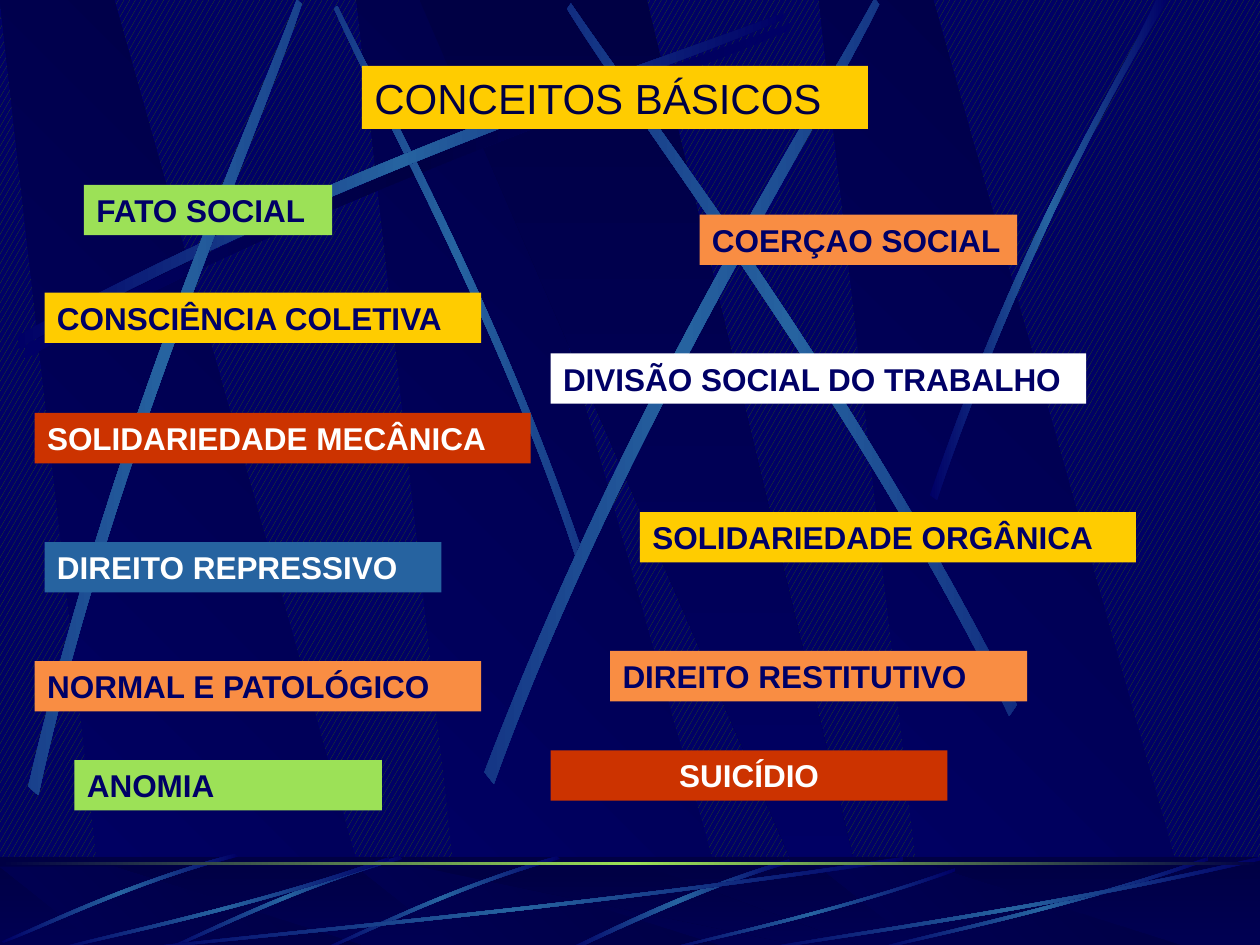
from dataclasses import dataclass
from typing import NamedTuple

from lxml.etree import SubElement
from pptx import Presentation
from pptx.dml.color import RGBColor
from pptx.enum.dml import MSO_PATTERN
from pptx.enum.shapes import MSO_SHAPE
from pptx.enum.text import MSO_AUTO_SIZE, PP_ALIGN
from pptx.oxml.ns import qn
from pptx.util import Inches, Pt

COLUMNS, ROWS = 100, 75
WIDTH, HEIGHT = Inches(10), Inches(7.5)

NAVY = RGBColor(0x00, 0x00, 0x66)
MIDNIGHT = RGBColor(0x00, 0x00, 0x44)
MOSS = RGBColor(0x2D, 0x55, 0x13)
STEEL = RGBColor(0x26, 0x63, 0xA0)
GOLD = RGBColor(0xFF, 0xCC, 0x00)
LIME = RGBColor(0x9C, 0xE1, 0x57)
ORANGE = RGBColor(0xF9, 0x8D, 0x43)
RUST = RGBColor(0xCC, 0x33, 0x00)
WHITE = RGBColor(0xFF, 0xFF, 0xFF)


class Box(NamedTuple):
    column: float
    row: float
    columns: float
    rows: float

    def at(self, x: float, y: float) -> tuple[int, int]:
        return (round((self.column + x * self.columns) * WIDTH / COLUMNS),
                round((self.row + y * self.rows) * HEIGHT / ROWS))

    def frame(self) -> tuple[int, int, int, int]:
        left, top = self.at(0, 0)
        right, bottom = self.at(1, 1)
        return left, top, right - left, bottom - top


class Gradient(NamedTuple):
    colors: tuple[RGBColor, ...]
    angle: int = 0


class Outline(NamedTuple):
    points: tuple[tuple[float, float], ...]
    curved: bool = True


@dataclass
class Ribbon:
    box: Box
    outline: Outline
    gradient: Gradient
    rotation: float = 0
    flip_x: bool = False
    flip_y: bool = False


@dataclass
class Concept:
    text: str
    box: Box
    fill: RGBColor
    color: RGBColor = NAVY
    size: int = 18
    bold: bool = True
    align: PP_ALIGN = PP_ALIGN.LEFT


STREAK = Outline(((0, 0.96), (0.43, 0.43), (0.83, 0.15), (1, 0),
                  (1, 0.02), (0.83, 0.19), (0.39, 0.5), (0, 1)))
STEEP_STREAK = Outline(((0, 0.99), (0.4, 0.44), (0.79, 0.17), (0.95, 0),
                        (1, 0), (0.52, 0.37), (0.16, 0.81), (0.03, 1)))
LOW_STREAK = Outline(((0, 0.99), (0.16, 0.82), (0.49, 0.37), (0.99, 0),
                      (1, 0.04), (0.68, 0.25), (0.23, 0.77), (0.03, 1)))
SHAFT = Outline(((0.28, 1), (1, 1), (0.3, 0), (0, 0)), curved=False)
WEDGE = Outline(((0, 0), (0.9, 1), (1, 1), (0.5, 0)), curved=False)

GLOW = Gradient((NAVY, STEEL, NAVY))
SHADE = Gradient((NAVY, MIDNIGHT, NAVY))
SHAFT_FADE = Gradient((NAVY, MIDNIGHT), 315)
DOWN_FADE = Gradient((MIDNIGHT, NAVY), 90)
RULE_GLOW = Gradient((MIDNIGHT, LIME, MIDNIGHT))


def shafts(row: float, rows: float) -> list[Ribbon]:
    return [Ribbon(Box(column, row, 30.2, rows), SHAFT, SHAFT_FADE)
            for column in (28.3, 0, 65)] + [
        Ribbon(Box(33.3, row, 36.1, rows), WEDGE, DOWN_FADE)]


SKY = shafts(0, 75.2) + [
    Ribbon(Box(2, 1.8, 60.8, 26.7), STREAK, SHADE),
    Ribbon(Box(14.1, 13.5, 44.2, 17.5), STREAK, GLOW, 45, flip_x=True),
    Ribbon(Box(1.4, 1, 60.8, 26.7), STREAK, GLOW),
    Ribbon(Box(-17.1, 18.2, 60.8, 26.7), STREAK, GLOW, 311.7),
    Ribbon(Box(23.1, 16, 62.4, 30.1), STREAK, GLOW, 321.6),
    Ribbon(Box(32.3, 15.2, 60.8, 26.7), STREAK, GLOW, 34.7, flip_x=True),
    Ribbon(Box(73.8, 0, 18.9, 39.7), STEEP_STREAK, GLOW),
]
FLOOR = Box(0, 68, 100, 7.5)
FLOOR_STREAKS = [Ribbon(Box(44.8, 68.2, 18, 7.3), LOW_STREAK, GLOW)] + [
    Ribbon(Box(column, row, columns, rows), STREAK, GLOW, 315, flip_x=True)
    for column, row, columns, rows in ((25.8, 67.6, 18.4, 8.3), (13.3, 67.6, 18.4, 8.3),
                                       (0.5, 67.1, 18, 8.5))
] + [
    Ribbon(Box(column, row, columns, 75.5 - row), STREAK, GLOW, flip_x=True, flip_y=True)
    for column, row, columns in ((10, 68, 61.7), (4.2, 68, 26.7), (52.7, 68.9, 23.1),
                                 (69.2, 68, 26.7), (60, 68, 40))
]
FLOOR_RULE = Box(0, 68.4, 100, 0.24)

CONCEPTS = [
    Concept("CONCEITOS BÁSICOS", Box(28.73, 5.23, 40.16, 5), GOLD, MIDNIGHT, 24, False),
    Concept("FATO SOCIAL", Box(6.67, 14.67, 19.7, 4), LIME),
    Concept("COERÇAO SOCIAL", Box(55.52, 17.04, 25.2, 4), ORANGE),
    Concept("CONSCIÊNCIA COLETIVA", Box(3.54, 23.22, 34.65, 4), GOLD),
    Concept("DIVISÃO SOCIAL DO TRABALHO", Box(43.7, 28.05, 42.5, 4), WHITE),
    Concept("SOLIDARIEDADE MECÂNICA", Box(2.75, 32.78, 39.37, 4), RUST, WHITE),
    Concept("SOLIDARIEDADE ORGÂNICA", Box(50.79, 40.64, 39.37, 4), GOLD),
    Concept("DIREITO REPRESSIVO", Box(3.54, 43.03, 31.5, 4), STEEL, WHITE),
    Concept("NORMAL E PATOLÓGICO", Box(2.75, 52.47, 35.43, 4), ORANGE),
    Concept("DIREITO RESTITUTIVO", Box(48.42, 51.67, 33.1, 4), ORANGE),
    Concept("SUICÍDIO", Box(43.7, 59.55, 31.5, 4), RUST, WHITE, align=PP_ALIGN.CENTER),
    Concept("ANOMIA", Box(5.91, 60.33, 24.4, 4), LIME),
]


def paint_gradient(shape, gradient: Gradient) -> None:
    shape.shadow.inherit = False
    shape.line.fill.background()
    shape.fill.gradient()
    shape.fill.gradient_angle = (360 - gradient.angle) % 360
    stops = next(shape.element.iter(qn("a:gsLst")))
    stops.getparent().set("rotWithShape", "0")
    for stop in list(stops):
        stops.remove(stop)
    for index, color in enumerate(gradient.colors):
        position = 100000 * index // (len(gradient.colors) - 1)
        stop = SubElement(stops, qn("a:gs"), pos=str(position))
        SubElement(stop, qn("a:srgbClr"), val=str(color))


def bend_sides(shape) -> None:
    sides = list(shape.element.iter(qn("a:lnTo")))
    for controls in (sides[:3], sides[4:]):
        bend = controls[0].makeelement(qn("a:cubicBezTo"))
        controls[0].addprevious(bend)
        for control in controls:
            bend.append(control[0])
            control.getparent().remove(control)


def draw_ribbon(slide, ribbon: Ribbon) -> None:
    points = [ribbon.box.at(1 - x if ribbon.flip_x else x, 1 - y if ribbon.flip_y else y)
              for x, y in ribbon.outline.points]
    builder = slide.shapes.build_freeform(*points[0], scale=1.0)
    builder.add_line_segments(points[1:], close=False)
    shape = builder.convert_to_shape()
    if ribbon.outline.curved:
        bend_sides(shape)
    shape.rotation = ribbon.rotation
    paint_gradient(shape, ribbon.gradient)


def draw_band(slide, box: Box, gradient: Gradient) -> None:
    band = slide.shapes.add_shape(MSO_SHAPE.RECTANGLE, *box.frame())
    paint_gradient(band, gradient)


def draw_veil(slide, box: Box, color: RGBColor, opacity: int) -> None:
    veil = slide.shapes.add_shape(MSO_SHAPE.RECTANGLE, *box.frame())
    veil.shadow.inherit = False
    veil.line.fill.background()
    veil.fill.solid()
    veil.fill.fore_color.rgb = color
    tint = next(veil.element.spPr.iter(qn("a:srgbClr")))
    SubElement(tint, qn("a:alpha"), val=str(opacity * 1000))


def draw_concept(slide, concept: Concept) -> None:
    label = slide.shapes.add_textbox(*concept.box.frame())
    label.fill.solid()
    label.fill.fore_color.rgb = concept.fill
    label.text_frame.word_wrap = True
    label.text_frame.auto_size = MSO_AUTO_SIZE.SHAPE_TO_FIT_TEXT
    paragraph = label.text_frame.paragraphs[0]
    paragraph.text = concept.text
    paragraph.alignment = concept.align
    paragraph.font.name = "Arial"
    paragraph.font.size = Pt(concept.size)
    paragraph.font.bold = concept.bold
    paragraph.font.color.rgb = concept.color


def main() -> None:
    deck = Presentation()
    deck.slide_width, deck.slide_height = WIDTH, HEIGHT
    slide = deck.slides.add_slide(deck.slide_layouts[6])
    backdrop = slide.background.fill
    backdrop.patterned()
    backdrop.pattern = MSO_PATTERN.LARGE_CONFETTI
    backdrop.fore_color.rgb = MOSS
    backdrop.back_color.rgb = NAVY
    for ribbon in SKY:
        draw_ribbon(slide, ribbon)
    draw_band(slide, FLOOR, DOWN_FADE)
    for ribbon in shafts(68.8, 6.7):
        draw_ribbon(slide, ribbon)
    draw_veil(slide, FLOOR, MIDNIGHT, 50)
    for ribbon in FLOOR_STREAKS:
        draw_ribbon(slide, ribbon)
    draw_band(slide, FLOOR_RULE, RULE_GLOW)
    for concept in CONCEPTS:
        draw_concept(slide, concept)
    deck.save("out.pptx")


if __name__ == "__main__":
    main()
